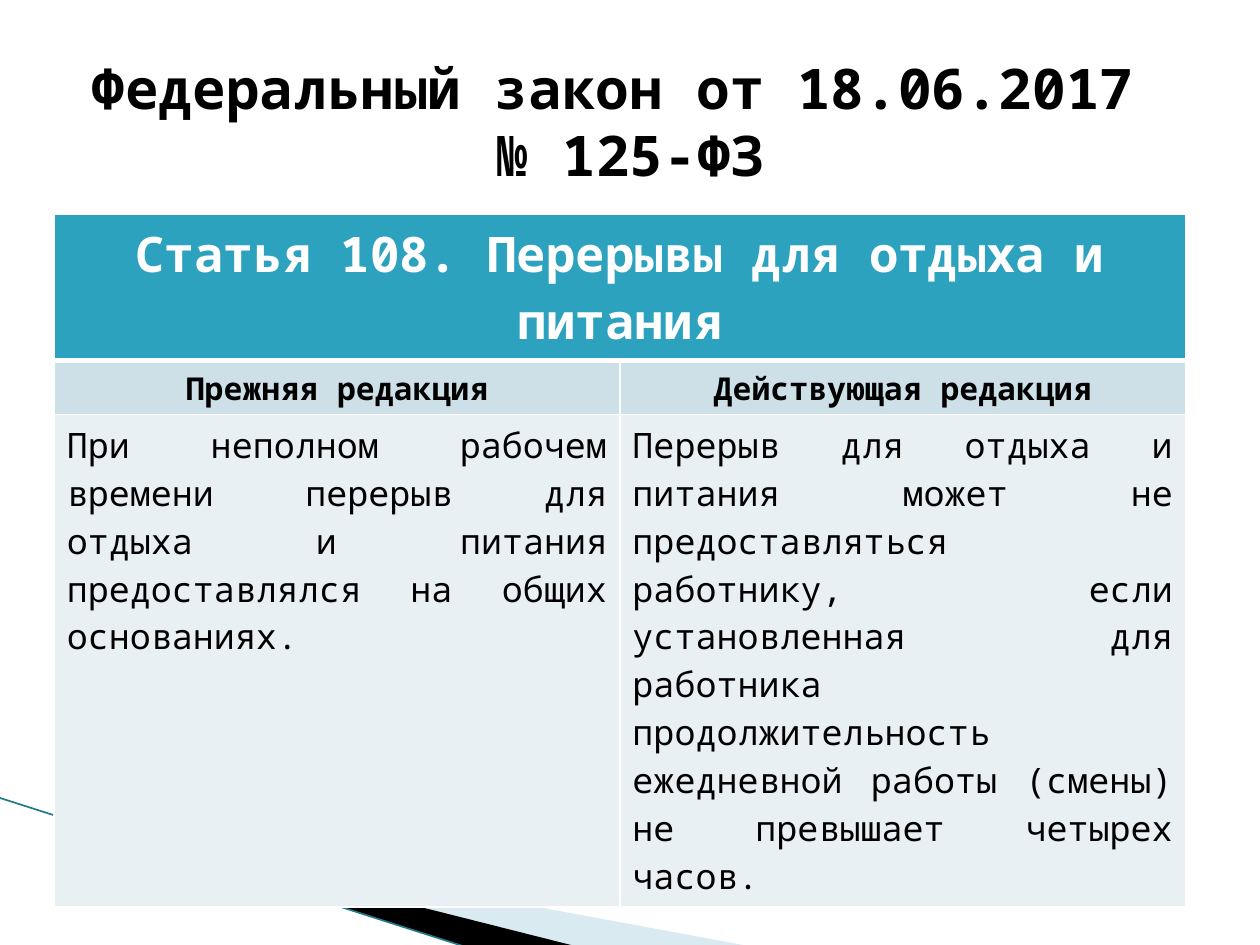
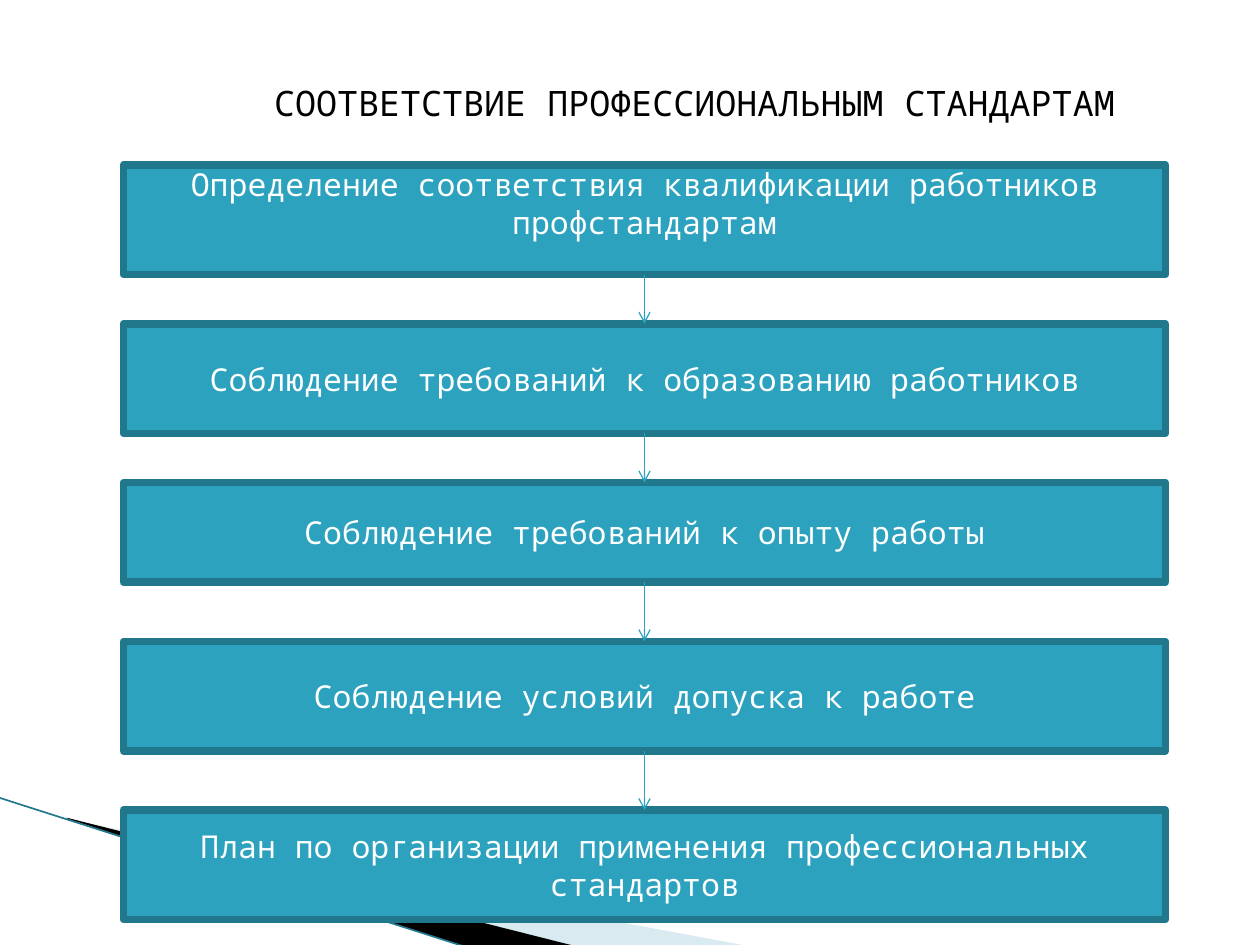
import pptx
import pptx.util
import pptx.dml.color
import pptx.enum.shapes
import pptx.enum.text
import pptx.oxml
import pptx.oxml.ns
import lxml.etree

FONT = "Noto Sans Mono"
COLORS = {
    "black": "000000", "white": "FFFFFF", "teal": "2DA2BF", "dark_teal": "21788D",
    "pale_blue": "A0CBDC", "subheader": "CDE0E8", "body": "E8F0F4",
}
ALIGN = pptx.enum.text.PP_ALIGN
ANCHOR = pptx.enum.text.MSO_ANCHOR
qn = pptx.oxml.ns.qn
rgb = {name: pptx.dml.color.RGBColor.from_string(value) for name, value in COLORS.items()}

deck = pptx.Presentation()
deck.slide_width = pptx.util.Inches(10)
deck.slide_height = pptx.util.Inches(7.5)

# Grid: 100 columns by 75 rows
COL = deck.slide_width / 100
ROW = deck.slide_height / 75


def write(frame, text, size=18, color="white", bold=False, align=ALIGN.CENTER, anchor=ANCHOR.MIDDLE):
    frame.word_wrap = True
    frame.vertical_anchor = anchor
    paragraph = frame.paragraphs[0]
    paragraph.text = text
    paragraph.alignment = align
    for run in paragraph.runs:
        run.font.name = FONT
        run.font.size = pptx.util.Pt(size)
        run.font.bold = bold
        run.font.color.rgb = rgb[color]


def draw_line(slide, start, end, color, width, arrow=False):
    line = slide.shapes.add_connector(
        pptx.enum.shapes.MSO_CONNECTOR.STRAIGHT,
        int(start[0] * COL), int(start[1] * ROW), int(end[0] * COL), int(end[1] * ROW))
    line.line.color.rgb = rgb[color]
    line.line.width = pptx.util.Pt(width)
    if arrow:
        lxml.etree.SubElement(line.line._get_or_add_ln(), qn("a:tailEnd"), type="arrow")
    lxml.etree.SubElement(line._element.spPr, qn("a:effectLst"))


# Both slides: corner wedges and the slanted line
wedges = [
    ("pale_blue", 40, [(5.5, 65.1), (59.5, 75.1), (45.6, 75.1), (5.5, 65)]),
    ("black", 100, [(5.3, 64.9), (45.7, 75.1), (37.2, 75.2), (5.4, 65)]),
]
law, standards = [deck.slides.add_slide(deck.slide_layouts[6]) for _ in range(2)]
for slide in (law, standards):
    for color, opacity, corners in wedges:
        points = [(int(x * COL), int(y * ROW)) for x, y in corners]
        outline = slide.shapes.build_freeform(*points[0])
        outline.add_line_segments(points[1:], close=True)
        wedge = outline.convert_to_shape()
        wedge.shadow.inherit = False
        wedge.fill.solid()
        wedge.fill.fore_color.rgb = rgb[color]
        wedge.line.fill.background()
        if opacity < 100:
            tint = wedge._element.spPr.find(".//" + qn("a:srgbClr"))
            lxml.etree.SubElement(tint, qn("a:alpha"), val=str(opacity * 1000))
    draw_line(slide, (-0.1, 63.3), (37.1, 75.2), "dark_teal", 0.95)

# Slide 1: heading
law_heading = law.shapes.add_textbox(int(5 * COL), int(3 * ROW), int(90 * COL), int(13.2 * ROW))
write(law_heading.text_frame, "Федеральный закон от 18.06.2017 \v№ 125-ФЗ",
      size=32, color="black", bold=True)

# Slide 1: former and current wording of the article
article_rows = [
    (11.6, "teal", ["Статья 108. Перерывы для отдыха и питания"],
     dict(size=28, bold=True)),
    (4.3, "subheader", ["Прежняя редакция", "Действующая редакция"],
     dict(color="black", bold=True)),
    (39.1, "body", [
        "При неполном рабочем времени перерыв для отдыха и питания "
        "предоставлялся на общих основаниях.",
        "Перерыв для отдыха и питания может не предоставляться работнику, если "
        "установленная для работника продолжительность ежедневной работы (смены) "
        "не превышает четырех часов."],
     dict(size=20, color="black", align=ALIGN.JUSTIFY)),
]
article_height = sum(height for height, *_ in article_rows)
article = law.shapes.add_table(len(article_rows), 2, int(4.3 * COL), int(17 * ROW),
                               int(89.8 * COL), int(article_height * ROW)).table
article.cell(0, 0).merge(article.cell(0, 1))
for row, (height, fill, texts, style) in enumerate(article_rows):
    article.rows[row].height = int(height * ROW)
    for column in range(2):
        cell = article.cell(row, column)
        properties = cell._tc.get_or_add_tcPr()
        for side in ("lnL", "lnR", "lnT", "lnB"):
            thick = (row, side) in ((0, "lnB"), (1, "lnT"))
            border = lxml.etree.SubElement(properties, qn("a:" + side),
                                           w=str(pptx.util.Pt(3 if thick else 1)))
            paint = lxml.etree.SubElement(border, qn("a:solidFill"))
            lxml.etree.SubElement(paint, qn("a:srgbClr"), val=COLORS["white"])
        cell.fill.solid()
        cell.fill.fore_color.rgb = rgb[fill]
        if column < len(texts):
            write(cell.text_frame, texts[column], **{"anchor": None, **style})

# Slide 2: heading
standards_heading = standards.shapes.add_textbox(
    int(12.6 * COL), int(5.8 * ROW), int(85.1 * COL), int(4.6 * ROW))
write(standards_heading.text_frame, "СООТВЕТСТВИЕ ПРОФЕССИОНАЛЬНЫМ СТАНДАРТАМ",
      size=20, color="black")

# Slide 2: chain of steps, each joined to the next by an arrow
STEP_LEFT, STEP_WIDTH = 9.8, 82.7
steps = [
    (13.1, 8.7, "Определение соответствия квалификации работников профстандартам"),
    (25.7, 8.7, "Соблюдение требований к образованию работников"),
    (38.3, 7.9, "Соблюдение требований к опыту работы"),
    (50.9, 8.7, "Соблюдение условий допуска к работе"),
    (64.3, 8.7, "План по организации применения профессиональных стандартов"),
]
for number, (top, height, text) in enumerate(steps):
    step = standards.shapes.add_shape(
        pptx.enum.shapes.MSO_SHAPE.RECTANGLE,
        int(STEP_LEFT * COL), int(top * ROW), int(STEP_WIDTH * COL), int(height * ROW))
    step.shadow.inherit = False
    step.fill.solid()
    step.fill.fore_color.rgb = rgb["teal"]
    step.line.color.rgb = rgb["dark_teal"]
    step.line.width = pptx.util.Pt(4.33)
    # The first step's text sits at the top edge
    if number == 0:
        step.text_frame.margin_top = 0
    write(step.text_frame, text, anchor=ANCHOR.MIDDLE if number else ANCHOR.TOP)

middle = STEP_LEFT + STEP_WIDTH / 2
for (top, height, _), (next_top, _, _) in zip(steps, steps[1:]):
    draw_line(standards, (middle, top + height), (middle, next_top), "teal", 0.75, arrow=True)

deck.save("out.pptx")
